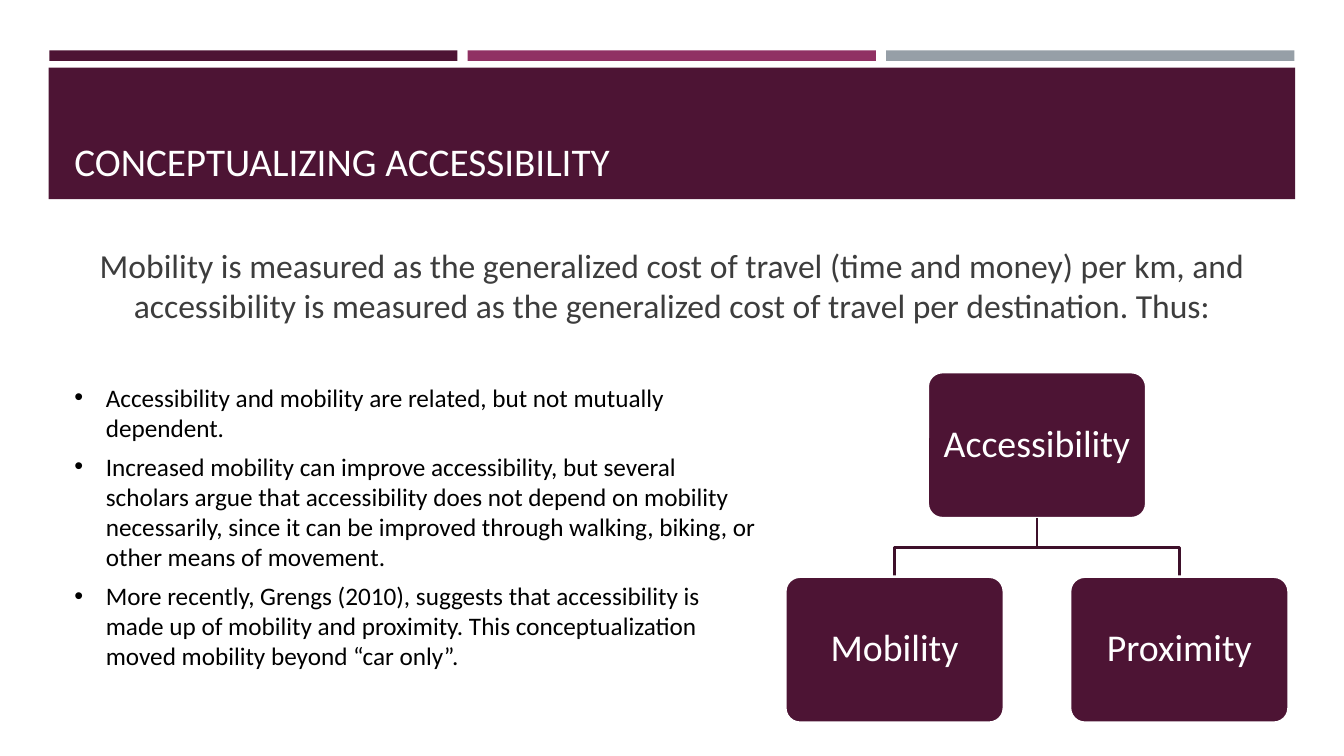
"""Build the slide on conceptualizing accessibility as mobility and proximity."""
import lxml.etree
import pptx
import pptx.dml.color
import pptx.enum.shapes
import pptx.enum.text
import pptx.oxml.ns
import pptx.util

Pt = pptx.util.Pt
RGBColor = pptx.dml.color.RGBColor
SHAPE = pptx.enum.shapes.MSO_SHAPE
ALIGN = pptx.enum.text.PP_ALIGN
ANCHOR = pptx.enum.text.MSO_ANCHOR

PLUM = RGBColor(0x4D, 0x14, 0x34)
MAGENTA = RGBColor(0x90, 0x31, 0x63)
SLATE = RGBColor(0x96, 0x9F, 0xA7)
LINK = RGBColor(0x3E, 0x10, 0x2A)
CHARCOAL = RGBColor(0x3D, 0x3D, 0x3D)
BLACK = RGBColor(0, 0, 0)
WHITE = RGBColor(255, 255, 255)

deck = pptx.Presentation()
deck.slide_width, deck.slide_height = Pt(960), Pt(540)
slide = deck.slides.add_slide(deck.slide_layouts[6])


def add_block(kind, left, top, width, height, fill):
    block = slide.shapes.add_shape(kind, Pt(left), Pt(top), Pt(width), Pt(height))
    block.shadow.inherit = False
    block.fill.solid()
    block.fill.fore_color.rgb = fill
    block.line.fill.background()
    return block


def write(shape, lines, size, color, frame_format, paragraph_format):
    frame = shape.text_frame
    frame.word_wrap = True
    for name, value in frame_format.items():
        setattr(frame, name, value)
    frame.text = "\n".join(lines)
    for paragraph in frame.paragraphs:
        for name, value in paragraph_format.items():
            setattr(paragraph, name, value)
        font_format = {"name": "Calibri", "size": Pt(size)}
        for name, value in font_format.items():
            setattr(paragraph.runs[0].font, name, value)
        paragraph.runs[0].font.color.rgb = color


for column, accent in enumerate([PLUM, MAGENTA, SLATE]):
    add_block(SHAPE.RECTANGLE, 35.2 + 298.9 * column, 36, 291.6, 7.5, accent)
add_block(SHAPE.RECTANGLE, 34.8, 48.4, 890.4, 93.8, PLUM)

title = slide.shapes.add_textbox(Pt(46), Pt(55.4), Pt(868), Pt(80))
write(title, ["CONCEPTUALIZING ACCESSIBILITY"], 28, WHITE,
      {"vertical_anchor": ANCHOR.BOTTOM}, {})

premise = slide.shapes.add_textbox(Pt(46), Pt(171.4), Pt(868), Pt(80))
write(premise, [
    "Mobility is measured as the generalized cost of travel (time and money) per km, "
    "and accessibility is measured as the generalized cost of travel per destination. Thus:"
], 24, CHARCOAL, {}, {"alignment": ALIGN.CENTER, "space_before": Pt(4.8), "space_after": Pt(6)})

BOX_WIDTH, BOX_HEIGHT = 156, 104.2
ROOT_TOP, CHILD_TOP = 265.9, 412
ROOT_CENTER, CHILD_OFFSET = 740.7, 101.7
fork_start = ROOT_TOP + BOX_HEIGHT
fork_middle = (fork_start + CHILD_TOP) / 2

concepts = [
    ("Accessibility", ROOT_CENTER, ROOT_TOP),
    ("Mobility", ROOT_CENTER - CHILD_OFFSET, CHILD_TOP),
    ("Proximity", ROOT_CENTER + CHILD_OFFSET, CHILD_TOP),
]
for concept, center, top in concepts:
    if top == CHILD_TOP:
        outline = slide.shapes.build_freeform(Pt(ROOT_CENTER), Pt(fork_start))
        outline.add_line_segments([
            (Pt(ROOT_CENTER), Pt(fork_middle)),
            (Pt(center), Pt(fork_middle)),
            (Pt(center), Pt(CHILD_TOP)),
        ], close=False)
        branch = outline.convert_to_shape()
        branch.shadow.inherit = False
        branch.fill.background()
        branch.line.color.rgb = LINK
        branch.line.width = Pt(1.75)
    box = add_block(SHAPE.ROUNDED_RECTANGLE, center - BOX_WIDTH / 2, top,
                    BOX_WIDTH, BOX_HEIGHT, PLUM)
    box.adjustments[0] = 0.1
    box.line.color.rgb = WHITE
    box.line.width = Pt(1.75)
    write(box, [concept], 27, WHITE,
          {"vertical_anchor": ANCHOR.MIDDLE, "margin_left": Pt(8), "margin_right": Pt(8)},
          {"alignment": ALIGN.CENTER, "line_spacing": 0.9})

arguments = slide.shapes.add_textbox(Pt(46), Pt(269.3), Pt(506), Pt(216))
write(arguments, [
    "Accessibility and mobility are related, but not mutually dependent.",
    "Increased mobility can improve accessibility, but several scholars argue that "
    "accessibility does not depend on mobility necessarily, since it can be improved "
    "through walking, biking, or other means of movement.",
    "More recently, Grengs (2010), suggests that accessibility is made up of mobility "
    "and proximity. This conceptualization moved mobility beyond “car only”.",
], 18, BLACK, {}, {"space_after": Pt(6)})
for argument in arguments.text_frame.paragraphs:
    properties = argument._p.get_or_add_pPr()
    properties.set("marL", str(Pt(22.5)))
    properties.set("indent", str(-Pt(22.5)))
    for tag, name, value in [("a:buFont", "typeface", "Arial"), ("a:buChar", "char", "•")]:
        lxml.etree.SubElement(properties, pptx.oxml.ns.qn(tag)).set(name, value)

deck.save("out.pptx")
